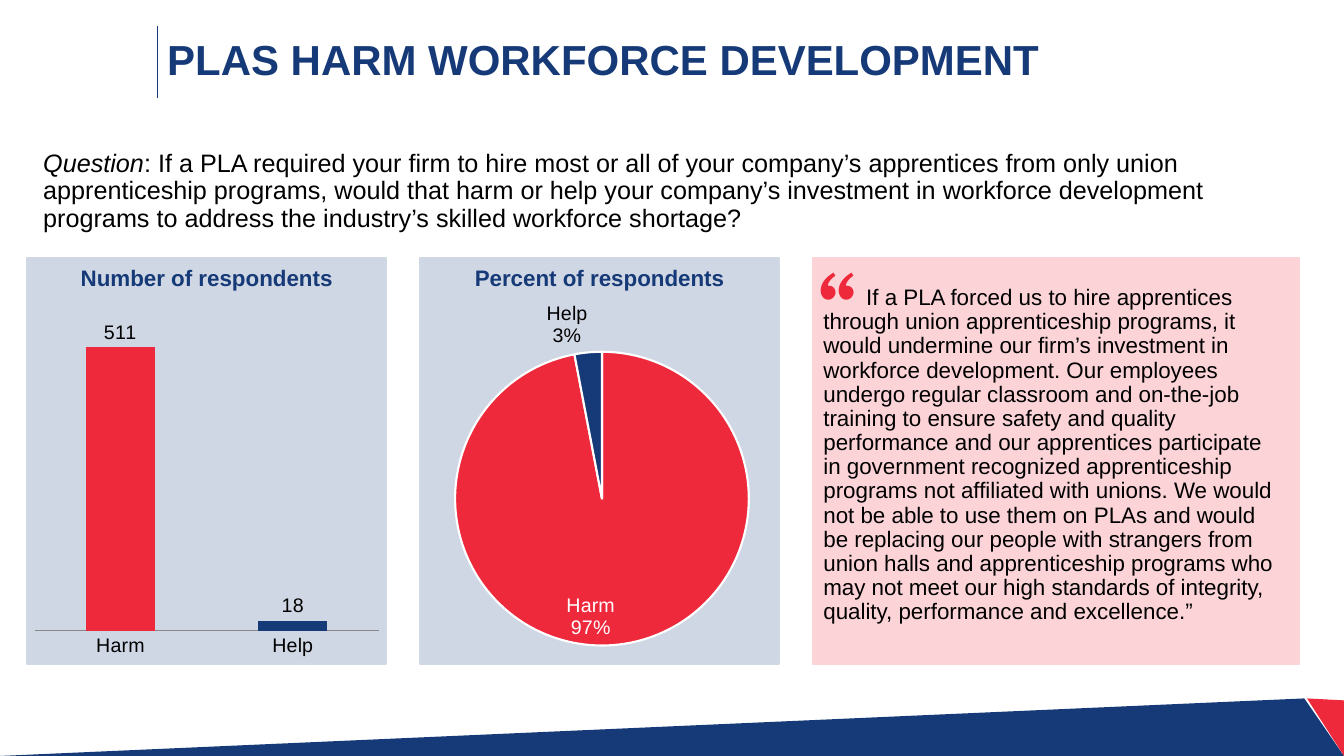
from lxml.etree import SubElement
from pptx import Presentation
from pptx.chart.data import CategoryChartData
from pptx.dml.color import RGBColor
from pptx.enum.chart import XL_CHART_TYPE, XL_LABEL_POSITION, XL_TICK_MARK
from pptx.enum.shapes import MSO_CONNECTOR, MSO_SHAPE
from pptx.enum.text import MSO_ANCHOR, MSO_AUTO_SIZE, PP_ALIGN
from pptx.oxml import parse_xml
from pptx.oxml.ns import nsdecls, qn
from pptx.util import Cm, Pt

NAVY, RED, BLACK, WHITE = "163A78", "EE293C", "000000", "FFFFFF"
MIST, ROSE, GREY = "D0D8E4", "FCD4D8", "898989"
PANEL_TOP, PANEL_HEIGHT, PANEL_WIDTH = 6.5, 10.24, 9.04
COUNT_LEFT, PERCENT_LEFT, QUOTE_LEFT = 0.69, 10.59, 20.5

QUESTION = (
    ": If a PLA required your firm to hire most or all of your company’s apprentices "
    "from only union apprenticeship programs, would that harm or help your company’s "
    "investment in workforce development programs to address the industry’s skilled "
    "workforce shortage?"
)
QUOTE = (
    "If a PLA forced us to hire apprentices through union apprenticeship programs, it "
    "would undermine our firm’s investment in workforce development. Our employees "
    "undergo regular classroom and on-the-job training to ensure safety and quality "
    "performance and our apprentices participate in government recognized apprenticeship "
    "programs not affiliated with unions. We would not be able to use them on PLAs and "
    "would be replacing our people with strangers from union halls and apprenticeship "
    "programs who may not meet our high standards of integrity, quality, performance "
    "and excellence.”"
)


def rgb(value):
    return RGBColor.from_string(value)


def paint(fill, color):
    fill.solid()
    fill.fore_color.rgb = rgb(color)


def set_font(font, size, color=BLACK, **extra):
    values = {"name": "Arial", "size": Pt(size), **extra}
    for attribute, value in values.items():
        setattr(font, attribute, value)
    font.color.rgb = rgb(color)


def box(left, top, width, height):
    return Cm(left), Cm(top), Cm(width), Cm(height)


def write(frame, runs, size, color=BLACK, spacing=0.9, align=PP_ALIGN.LEFT):
    frame.word_wrap = True
    paragraph = frame.paragraphs[0]
    paragraph.alignment = align
    paragraph.line_spacing = spacing
    paragraph.space_before = Pt(0)
    for text, extra in runs:
        run = paragraph.add_run()
        run.text = text
        set_font(run.font, size, color, **extra)
    return paragraph


def add_text(slide, place, runs, size, **style):
    frame = slide.shapes.add_textbox(*box(*place)).text_frame
    return write(frame, runs, size, **style)


def add_title(slide, text):
    title = slide.shapes.title
    title.left, title.top, title.width, title.height = box(3.96, 0.69, 28.4, 1.73)
    title.text_frame.auto_size = MSO_AUTO_SIZE.NONE
    title.text_frame.vertical_anchor = MSO_ANCHOR.MIDDLE
    write(title.text_frame, [(text, {"bold": True})], 30, NAVY)


def add_rule(slide):
    rule = slide.shapes.add_connector(
        MSO_CONNECTOR.STRAIGHT, Cm(3.96), Cm(0.66), Cm(3.96), Cm(2.46)
    )
    rule.line.color.rgb = rgb(NAVY)
    rule.line.width = Pt(0.5)
    SubElement(rule.element.spPr, qn("a:effectLst"))


def add_wedge(slide, corners, color):
    start, *rest = [(Cm(x), Cm(y)) for x, y in corners]
    builder = slide.shapes.build_freeform(*start)
    builder.add_line_segments(rest, close=True)
    wedge = builder.convert_to_shape()
    wedge.shadow.inherit = False
    paint(wedge.fill, color)
    wedge.line.fill.background()


def add_panel(slide, left, width, fill, line, opacity=100):
    panel = slide.shapes.add_shape(
        MSO_SHAPE.RECTANGLE, *box(left, PANEL_TOP, width, PANEL_HEIGHT)
    )
    panel.shadow.inherit = False
    paint(panel.fill, fill)
    panel.line.color.rgb = rgb(line)
    panel.line.width = Pt(1.5)
    if opacity < 100:
        color = panel.element.spPr.find(qn("a:solidFill"))[0]
        SubElement(color, qn("a:alpha"), val=str(opacity * 1000))


def add_chart(slide, kind, place, values):
    data = CategoryChartData()
    data.categories = ["Harm", "Help"]
    data.add_series("Series 1", values)
    chart = slide.shapes.add_chart(kind, *box(*place), data).chart
    chart.has_legend = False
    chart.has_title = False
    set_font(chart.font, 14)
    plot = chart.plots[0]
    plot.vary_by_categories = False
    for index, color in enumerate((RED, NAVY)):
        paint(plot.series[0].points[index].format.fill, color)
    return chart


def add_count_chart(slide):
    place = (COUNT_LEFT, 7.32, PANEL_WIDTH, 9.42)
    chart = add_chart(slide, XL_CHART_TYPE.COLUMN_CLUSTERED, place, (511, 18))
    plot = chart.plots[0]
    plot.gap_width = 150
    plot.has_data_labels = True
    plot.data_labels.show_value = True
    plot.data_labels.position = XL_LABEL_POSITION.OUTSIDE_END
    set_font(plot.data_labels.font, 14)
    counts = chart.value_axis
    counts.visible = False
    counts.has_major_gridlines = False
    counts.minimum_scale, counts.maximum_scale = 0, 600
    answers = chart.category_axis
    answers.major_tick_mark = XL_TICK_MARK.NONE
    answers.format.line.color.rgb = rgb(GREY)
    set_font(answers.tick_labels.font, 14)


def add_percent_chart(slide):
    chart = add_chart(slide, XL_CHART_TYPE.PIE, (9.04, 7.24, 13.06, 10.06), (97, 3))
    styles = ((XL_LABEL_POSITION.INSIDE_END, WHITE), (XL_LABEL_POSITION.OUTSIDE_END, BLACK))
    series = chart.plots[0].series[0]
    for index, (position, color) in enumerate(styles):
        point = series.points[index]
        point.format.line.color.rgb = rgb(WHITE)
        point.format.line.width = Pt(1.5)
        set_font(point.data_label.font, 14, color)
        point.data_label.position = position
    shown = {"c:showVal": "0", "c:showCatName": "1", "c:showPercent": "1"}
    for label in chart.element.iter(qn("c:dLbl")):
        for tag, value in shown.items():
            label.find(qn(tag)).set("val", value)
        SubElement(label, qn("c:separator")).text = "\n"
    area = chart.element.chart.plotArea
    for old in area.findall(qn("c:layout")):
        area.remove(old)
    bounds = "".join(
        f'<c:{side} val="{share}"/>'
        for side, share in {"x": 0.186, "y": 0.118, "w": 0.567, "h": 0.823}.items()
    )
    area.insert(0, parse_xml(
        f'<c:layout {nsdecls("c")}><c:manualLayout><c:layoutTarget val="inner"/>'
        f'<c:xMode val="edge"/><c:yMode val="edge"/>{bounds}</c:manualLayout></c:layout>'
    ))


def add_quote(slide):
    add_panel(slide, QUOTE_LEFT, 12.24, ROSE, ROSE)
    quote = add_text(slide, (QUOTE_LEFT, 7.09, 12.14, 8.86), [(QUOTE, {})], 16)
    quote._p.get_or_add_pPr().set("indent", str(Cm(1.08)))
    mark = ("“", {"bold": True, "name": "TeX Gyre Schola"})
    add_text(slide, (20.4, 6.27, 1.3, 2.57), [mark], 54, color=RED, spacing=1.0)


def main():
    deck = Presentation()
    deck.slide_width, deck.slide_height = Cm(33.87), Cm(19.05)
    slide = deck.slides.add_slide(deck.slide_layouts[5])
    add_rule(slide)
    add_wedge(slide, [(0, 19.05), (32.87, 17.6), (33.87, 19.05)], NAVY)
    add_wedge(slide, [(32.94, 17.6), (33.87, 17.65), (33.87, 19.05)], RED)
    add_title(slide, "PLAS HARM WORKFORCE DEVELOPMENT")
    question = [("Question", {"italic": True}), (QUESTION, {})]
    add_text(slide, (0.84, 3.68, 31.52, 2.34), question, 18)
    headings = {COUNT_LEFT: "Number of respondents", PERCENT_LEFT: "Percent of respondents"}
    for left, heading in headings.items():
        add_panel(slide, left, PANEL_WIDTH, NAVY, MIST, opacity=20)
        add_text(slide, (left, 6.6, PANEL_WIDTH, 0.89), [(heading, {"bold": True})], 16,
                 color=NAVY, align=PP_ALIGN.CENTER)
    add_count_chart(slide)
    add_percent_chart(slide)
    add_quote(slide)
    deck.save("out.pptx")


if __name__ == "__main__":
    main()
